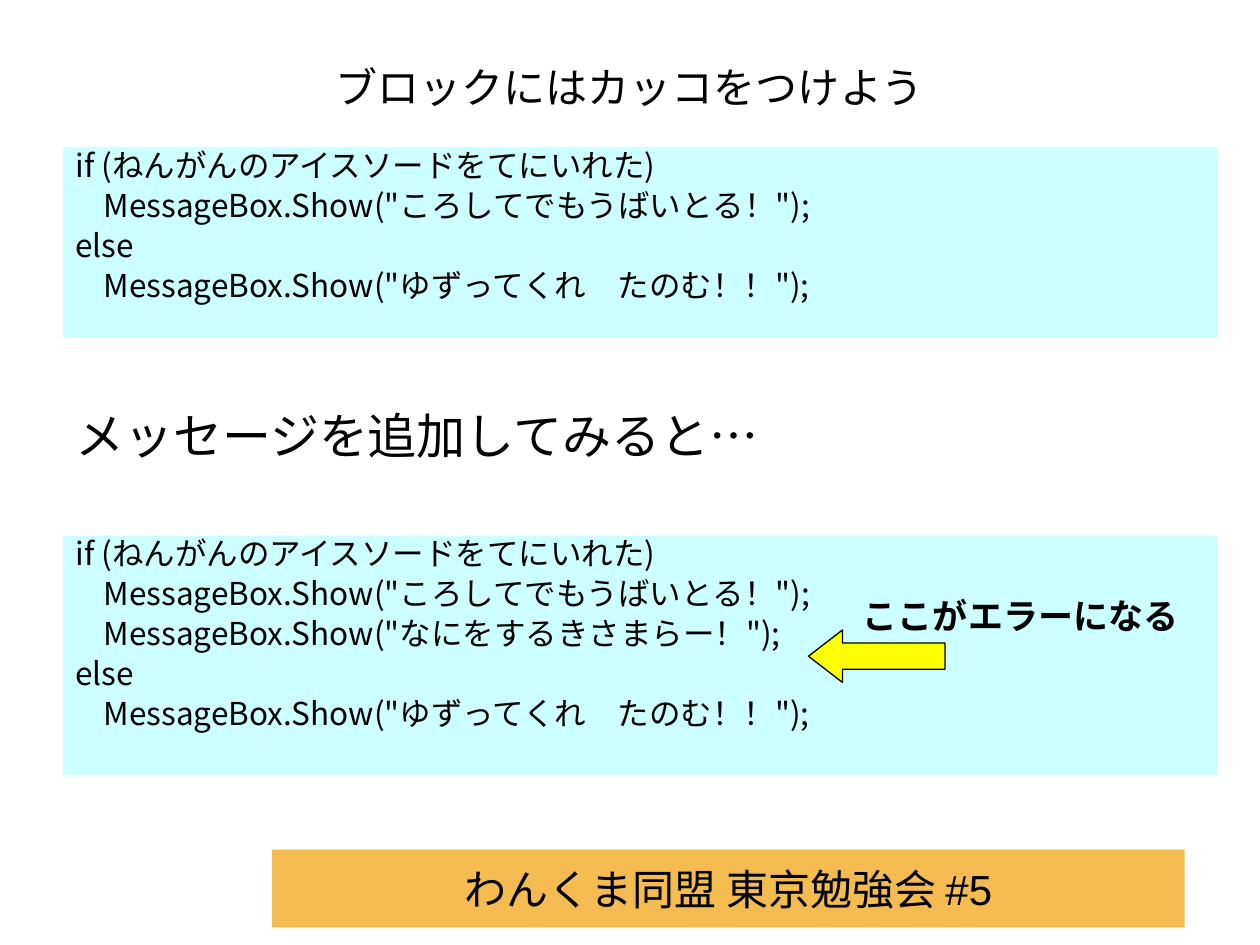
from pptx import Presentation
from pptx.dml.color import RGBColor
from pptx.enum import shapes, text
from pptx.util import Pt


def color(value):
    return RGBColor.from_string(value)


def add_box(page, kind, bounds, lines=(), size=18, font="Arial", fill=None,
            align=text.PP_ALIGN.LEFT, anchor=text.MSO_ANCHOR.TOP, bold=False):
    box = page.shapes.add_shape(kind, *map(Pt, bounds)) if fill else page.shapes.add_textbox(*map(Pt, bounds))
    if fill:
        box.shadow.inherit = False
        box.fill.solid()
        box.fill.fore_color.rgb = color(fill)
        box.line.fill.background()
    frame = box.text_frame
    frame.word_wrap = True
    frame.vertical_anchor = anchor
    frame.text = "\n".join(lines)
    for paragraph in frame.paragraphs:
        paragraph.alignment = align
        for span in paragraph.runs:
            span.font.name = font
            span.font.size = Pt(size)
            span.font.bold = bold
            span.font.color.rgb = color("000000")
    return box


deck = Presentation()
deck.slide_width, deck.slide_height = Pt(720), Pt(540)
page = deck.slides.add_slide(deck.slide_layouts[6])
rectangle = shapes.MSO_SHAPE.RECTANGLE
centered = {"align": text.PP_ALIGN.CENTER, "anchor": text.MSO_ANCHOR.MIDDLE}

add_box(page, rectangle, (155.5, 485.5, 521.5, 44.5), ["わんくま同盟 東京勉強会 #5"],
        size=24, fill="F3BB50", **centered)
add_box(page, rectangle, (36, 21.6, 648, 55.4), ["ブロックにはカッコをつけよう"],
        size=24, font="Lato", **centered)
add_box(page, rectangle, (36, 228.2, 648, 41), ["メッセージを追加してみると…"], size=28)

condition = "if (ねんがんのアイスソードをてにいれた)"
attack = '    MessageBox.Show("ころしてでもうばいとる！");'
reaction = '    MessageBox.Show("なにをするきさまらー！");'
request = '    MessageBox.Show("ゆずってくれ　たのむ！！");'
listings = [
    (84, 109, [condition, attack, "else", request]),
    (306, 137, [condition, attack, reaction, "else", request]),
]
for top, height, lines in listings:
    listing = add_box(page, rectangle, (36, top, 660, height), lines,
                      font="Noto Sans CJK JP", fill="CCFFFF")
    for index, paragraph in enumerate(listing.text_frame.paragraphs):
        paragraph.line_spacing = 0.8
        paragraph.space_before = Pt(5.5 if index else 0)

arrow = add_box(page, shapes.MSO_SHAPE.LEFT_ARROW, (462, 360, 78, 30), fill="FFFF00")
arrow.adjustments[0] = 0.5
arrow.adjustments[1] = 0.65
arrow.line.color.rgb = color("000000")
arrow.line.width = Pt(0.75)
add_box(page, rectangle, (486, 336, 198, 31), ["ここがエラーになる"], size=20, bold=True)

deck.save("out.pptx")
